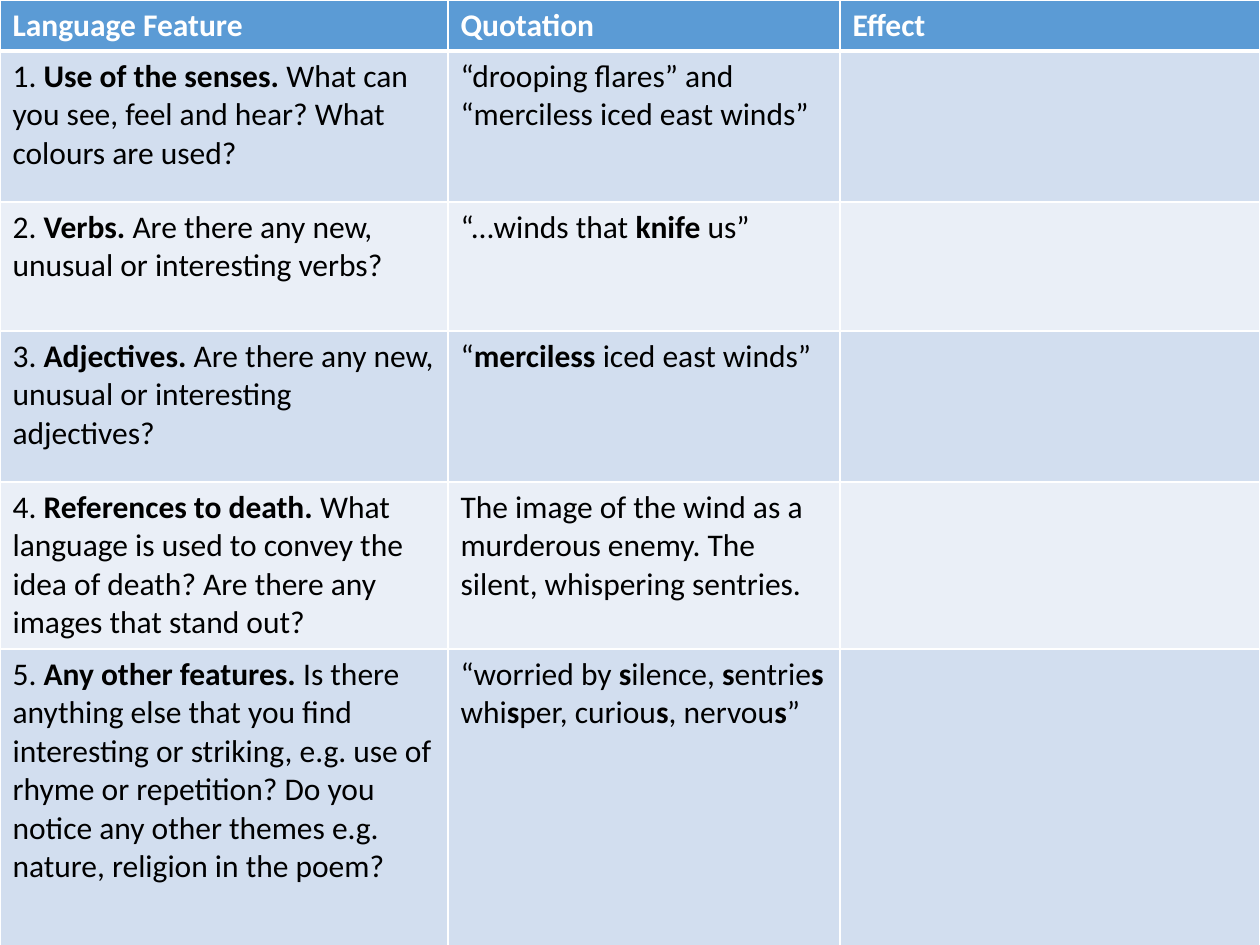
from lxml.etree import SubElement
from pptx import Presentation
from pptx.dml.color import RGBColor
from pptx.oxml.ns import qn
from pptx.util import Emu, Pt

PX = 914400 / 126
COLORS = {"header": "5B9BD5", "odd": "D2DEEF", "even": "EAEFF7",
          "white": "FFFFFF", "black": "000000"}
COLUMN_WIDTHS = [448, 392, 420]
ROW_HEIGHTS = [50, 151, 129, 151, 167, 313]

# Double asterisks enclose bold words
ROWS = [
    ["**Language Feature**", "**Quotation**", "**Effect**"],
    ["1. **Use of the senses. **What can you see, feel and hear? "
     "What colours are used?",
     "“drooping flares” and “merciless iced east winds”", ""],
    ["2. **Verbs.** Are there any new, unusual or interesting verbs?",
     "“...winds that **knife** us”", ""],
    ["3. **Adjectives.** Are there any new, unusual or interesting adjectives?",
     "“**merciless** iced east winds”", ""],
    ["4. **References to death. **What language is used to convey the idea of "
     "death? Are there any images that stand out?",
     "The image of the wind as a murderous enemy. "
     "The silent, whispering sentries.", ""],
    ["5. **Any other features. **Is there anything else that you find "
     "interesting or striking, e.g. use of rhyme or repetition? Do you notice "
     "any other themes e.g. nature, religion in the poem?",
     "“worried by **s**ilence, **s**entrie**s** whi**s**per, "
     "curiou**s**, nervou**s**”", ""],
]


def px(length):
    return Emu(round(length * PX))


def rgb(name):
    return RGBColor.from_string(COLORS[name])


def write_text(text_frame, text, color="black", size=18, font="Calibri"):
    paragraph = text_frame.paragraphs[0]
    paragraph.font.size = Pt(size)
    for index, part in enumerate(text.split("**")):
        if part:
            run = paragraph.add_run()
            run.text = part
            run.font.name = font
            run.font.size = Pt(size)
            run.font.bold = index % 2 == 1
            run.font.color.rgb = rgb(color)


def set_borders(cell, color="white", **widths):
    """Draw the cell's borders; they must precede the fill in the XML."""
    properties = cell._tc.get_or_add_tcPr()
    for side in ("L", "R", "T", "B"):
        line = SubElement(properties, qn(f"a:ln{side}"),
                          w=str(Pt(widths.get(side, 1))))
        fill = SubElement(line, qn("a:solidFill"))
        SubElement(fill, qn("a:srgbClr"), val=COLORS[color])


def add_feature_table(slide, left, top, width, height):
    frame = slide.shapes.add_table(len(ROWS), len(COLUMN_WIDTHS),
                                   px(left), px(top), px(width), px(height))
    table = frame.table
    for column, column_width in zip(table.columns, COLUMN_WIDTHS):
        column.width = px(column_width)
    for row_index, texts in enumerate(ROWS):
        table.rows[row_index].height = px(ROW_HEIGHTS[row_index])
        is_header = row_index == 0
        band = "header" if is_header else ("even", "odd")[row_index % 2]
        for column_index, text in enumerate(texts):
            cell = table.cell(row_index, column_index)
            # The line under the header is thicker
            set_borders(cell, T=3 if row_index == 1 else 1,
                        B=3 if is_header else 1)
            cell.fill.solid()
            cell.fill.fore_color.rgb = rgb(band)
            write_text(cell.text_frame, text,
                       color="white" if is_header else "black")


def main():
    presentation = Presentation()
    presentation.slide_width, presentation.slide_height = px(1260), px(945)
    slide = presentation.slides.add_slide(presentation.slide_layouts[6])
    add_feature_table(slide, 0, 0, sum(COLUMN_WIDTHS), sum(ROW_HEIGHTS))
    presentation.save("out.pptx")


if __name__ == "__main__":
    main()
